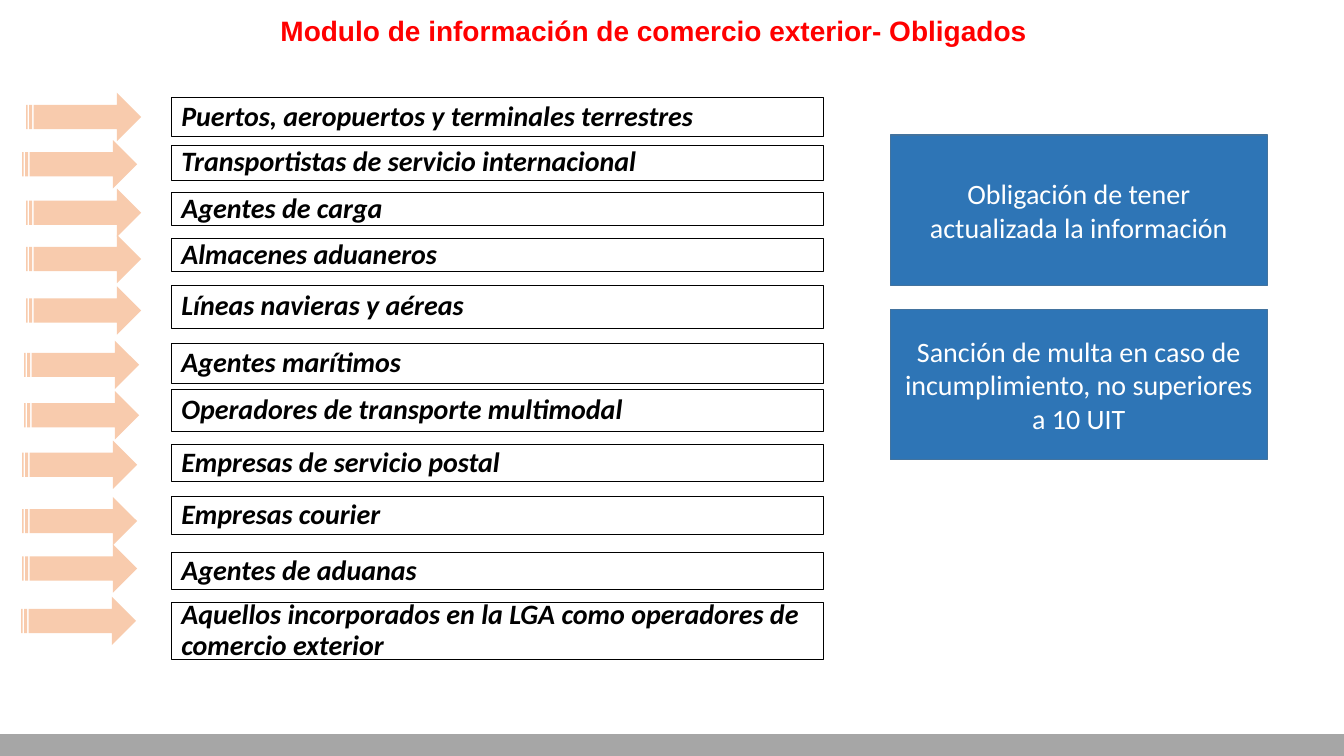
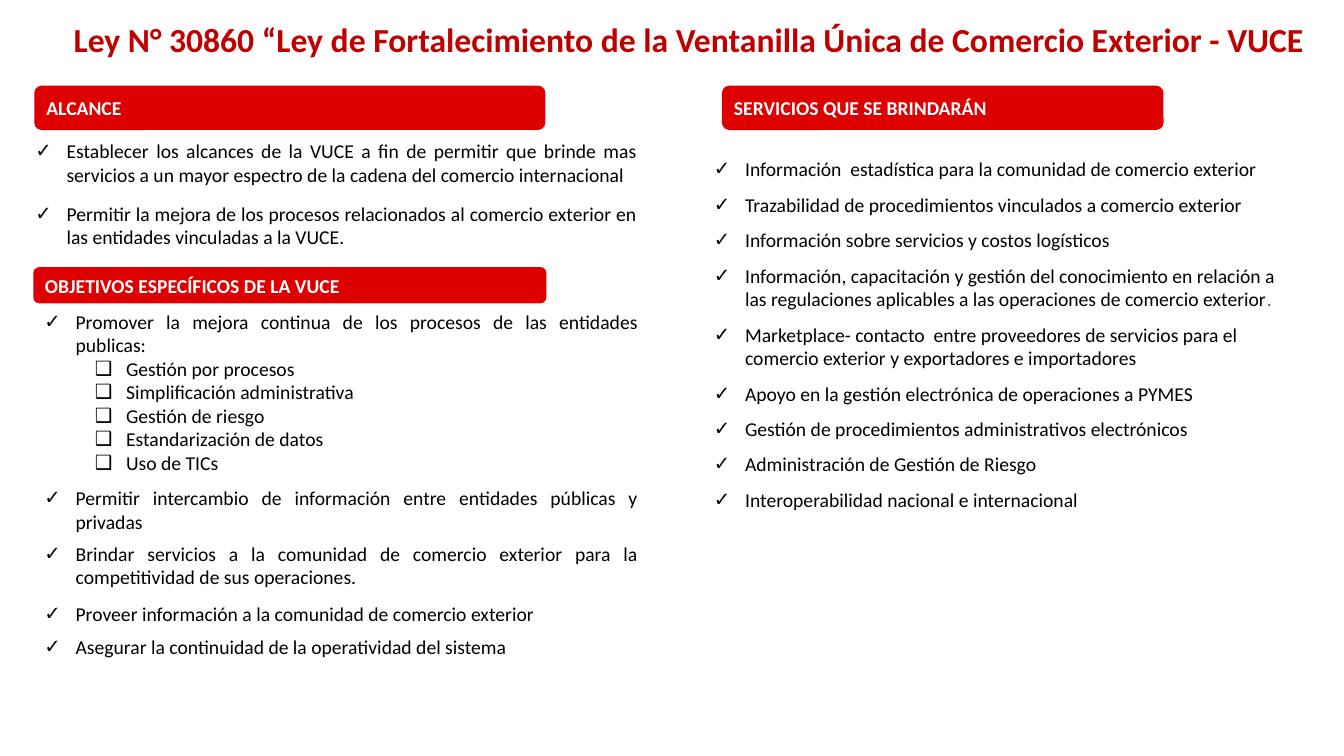
from pptx import Presentation
from pptx.dml.color import RGBColor
from pptx.enum.shapes import MSO_SHAPE
from pptx.enum.text import MSO_ANCHOR, MSO_AUTO_SIZE, PP_ALIGN
from pptx.oxml import parse_xml
from pptx.oxml.ns import nsdecls
from pptx.util import Inches, Pt

BLACK = RGBColor(0x00, 0x00, 0x00)
WHITE = RGBColor(0xFF, 0xFF, 0xFF)
RED = RGBColor(0xFF, 0x00, 0x00)
DARK_RED = RGBColor(0xC0, 0x00, 0x00)
HEADING_RED = RGBColor(0xDE, 0x00, 0x00)
PEACH = RGBColor(0xF8, 0xCB, 0xAD)
BLUE = RGBColor(0x2E, 0x75, 0xB6)
BLUE_EDGE = RGBColor(0x43, 0x73, 0x9E)
GRAY = RGBColor(0xA6, 0xA6, 0xA6)
DOT_GRAY = RGBColor(0x59, 0x59, 0x59)

# text, box top, box height, arrow left, arrow top
OBLIGADOS = [
    ("Puertos, aeropuertos y terminales terrestres", 0.97, 0.38, 0.26, 0.92),
    ("Transportistas de servicio internacional", 1.44, 0.35, 0.22, 1.39),
    ("Agentes de carga", 1.91, 0.33, 0.26, 1.87),
    ("Almacenes aduaneros", 2.37, 0.32, 0.26, 2.33),
    ("Líneas navieras y aéreas", 2.83, 0.43, 0.26, 2.84),
    ("Agentes marítimos", 3.41, 0.4, 0.24, 3.38),
    ("Operadores de transporte multimodal", 3.86, 0.42, 0.24, 3.88),
    ("Empresas de servicio postal", 4.41, 0.37, 0.22, 4.37),
    ("Empresas courier", 4.93, 0.37, 0.22, 4.93),
    ("Agentes de aduanas", 5.48, 0.37, 0.22, 5.4),
    ("Aquellos incorporados en la LGA como operadores de comercio exterior",
     5.98, 0.56, 0.21, 5.92),
]
NOTAS = [
    "Obligación de tener actualizada la información",
    "Sanción de multa en caso de incumplimiento, no superiores a 10 UIT",
]
TITULOS = [
    ("Modulo de información de comercio exterior- Obligados",
     (0.25, 0.12, 12.47, 0.36), dict(size=20, font="Arial", color=RED, align=PP_ALIGN.CENTER)),
    ("Ley N° 30860 “Ley de Fortalecimiento de la Ventanilla Única de Comercio Exterior - VUCE",
     (0.63, 0.14, 12.7, 0.5), dict(size=24, color=DARK_RED)),
]
ENCABEZADOS = [
    ("ALCANCE", (0.34, 0.85, 5.07, 0.44)),
    ("OBJETIVOS ESPECÍFICOS DE LA VUCE", (0.33, 2.65, 5.09, 0.36)),
    ("SERVICIOS QUE SE BRINDARÁN", (7.16, 0.85, 4.38, 0.44)),
]
# level, space before in points, text
ALCANCE = [
    (0, 0, "Establecer los alcances de la VUCE a fin de permitir que brinde mas servicios "
           "a un mayor espectro de la cadena del comercio internacional"),
    (0, 11, "Permitir la mejora de los procesos relacionados al comercio exterior en las "
            "entidades vinculadas a la VUCE."),
]
OBJETIVOS = [
    (0, 0, "Promover la mejora continua de los procesos de las entidades publicas:"),
    (1, 0, "Gestión por procesos"),
    (1, 0, "Simplificación administrativa"),
    (1, 0, "Gestión de riesgo"),
    (1, 0, "Estandarización de datos"),
    (1, 0, "Uso de TICs"),
    (0, 8.5, "Permitir intercambio de información entre entidades públicas y privadas"),
    (0, 6, "Brindar servicios a la comunidad de comercio exterior para la competitividad "
           "de sus operaciones."),
    (0, 9.5, "Proveer información a la comunidad de comercio exterior"),
    (0, 7, "Asegurar la continuidad de la operatividad del sistema"),
]
SERVICIOS = [
    "Información  estadística para la comunidad de comercio exterior",
    "Trazabilidad de procedimientos vinculados a comercio exterior",
    "Información sobre servicios y costos logísticos",
    "Información, capacitación y gestión del conocimiento en relación a las regulaciones "
    "aplicables a las operaciones de comercio exterior",
    "Marketplace- contacto  entre proveedores de servicios para el comercio exterior y "
    "exportadores e importadores",
    "Apoyo en la gestión electrónica de operaciones a PYMES",
    "Gestión de procedimientos administrativos electrónicos",
    "Administración de Gestión de Riesgo",
    "Interoperabilidad nacional e internacional",
]
CON_PUNTO = 3
LISTAS = [
    (1, (0.25, 1.33, 6.17, 1.23), ALCANCE, PP_ALIGN.JUSTIFY),
    (2, (0.34, 3.02, 6.09, 4.44), OBJETIVOS, PP_ALIGN.JUSTIFY),
    (4, (6.98, 1.51, 5.93, 3.64),
     [(0, 8.5 if i else 0, text) for i, text in enumerate(SERVICIOS)], PP_ALIGN.LEFT),
]
BULLETS = [("✓", 0.31), ("❑", 0.81)]
HANG = 0.31


def write(p, text, size=14, font="Calibri", color=BLACK, bold=False, italic=False,
          align=PP_ALIGN.LEFT, spacing=1.0, before=0):
    p.alignment, p.line_spacing, p.space_before = align, spacing, Pt(before)
    r = p.add_run()
    r.text = text
    r.font.size, r.font.name, r.font.color.rgb = Pt(size), font, color
    r.font.bold, r.font.italic = bold, italic


def place(sp, box):
    sp.left, sp.top, sp.width, sp.height = (Inches(v) for v in box)


def add_box(s, kind, box, fill, line=None, weight=1, text=None, **fmt):
    sp = s.shapes.add_shape(kind, *(Inches(v) for v in box))
    sp.shadow.inherit = False
    sp.fill.solid()
    sp.fill.fore_color.rgb = fill
    if line is None:
        sp.line.fill.background()
    else:
        sp.line.color.rgb = line
        sp.line.width = Pt(weight)
    if text:
        tf = sp.text_frame
        tf.word_wrap = True
        tf.vertical_anchor = MSO_ANCHOR.MIDDLE
        write(tf.paragraphs[0], text, **fmt)


def set_frame(sp, box, anchor):
    place(sp, box)
    tf = sp.text_frame
    tf.word_wrap = True
    tf.auto_size = MSO_AUTO_SIZE.NONE
    tf.vertical_anchor = anchor
    return tf


def add_slide(prs, layout, title):
    text, box, fmt = title
    s = prs.slides.add_slide(prs.slide_layouts[layout])
    tf = set_frame(s.shapes.title, box, MSO_ANCHOR.MIDDLE)
    write(tf.paragraphs[0], text, bold=True, **fmt)
    return s


def set_bullet(p, level):
    char, indent = BULLETS[level]
    p.level = level
    pPr = p._p.get_or_add_pPr()
    pPr.set("marL", str(Inches(indent)))
    pPr.set("indent", str(-Inches(HANG)))
    pPr.append(parse_xml(f'<a:buChar {nsdecls("a")} char="{char}"/>'))


def fill_list(sp, box, items, align):
    tf = set_frame(sp, box, MSO_ANCHOR.TOP)
    for i, (level, before, text) in enumerate(items):
        p = tf.add_paragraph() if i else tf.paragraphs[0]
        write(p, text, align=align, before=before)
        set_bullet(p, level)


def build_obligados(prs):
    s = add_slide(prs, 5, TITULOS[0])
    add_box(s, MSO_SHAPE.RECTANGLE, (0, 7.29, 13.33, 0.21), GRAY, GRAY)
    for text, top, height, arrow_left, arrow_top in OBLIGADOS:
        add_box(s, MSO_SHAPE.STRIPED_RIGHT_ARROW, (arrow_left, arrow_top, 1.14, 0.48), PEACH)
        add_box(s, MSO_SHAPE.RECTANGLE, (1.7, top, 6.47, height), WHITE, BLACK, 0.75,
                text, size=20, bold=True, italic=True, spacing=0.9)
    for i, text in enumerate(NOTAS):
        add_box(s, MSO_SHAPE.RECTANGLE, (8.83, 1.34 + i * 1.73, 3.74, 1.49), BLUE, BLUE_EDGE,
                text=text, size=20, color=WHITE, align=PP_ALIGN.CENTER)


def build_ley(prs):
    s = add_slide(prs, 4, TITULOS[1])
    for text, box in ENCABEZADOS:
        add_box(s, MSO_SHAPE.ROUNDED_RECTANGLE, box, HEADING_RED,
                text=text, color=WHITE, bold=True)
    bodies = {sp.placeholder_format.idx: sp for sp in s.placeholders}
    for idx, box, items, align in LISTAS:
        fill_list(bodies[idx], box, items, align)
    write(bodies[4].text_frame.paragraphs[CON_PUNTO], ".", color=DOT_GRAY, before=8.5)
    unused = bodies[3].element
    unused.getparent().remove(unused)


def main():
    prs = Presentation()
    prs.slide_width, prs.slide_height = Inches(13.33), Inches(7.5)
    build_obligados(prs)
    build_ley(prs)
    prs.save("out.pptx")


if __name__ == "__main__":
    main()
